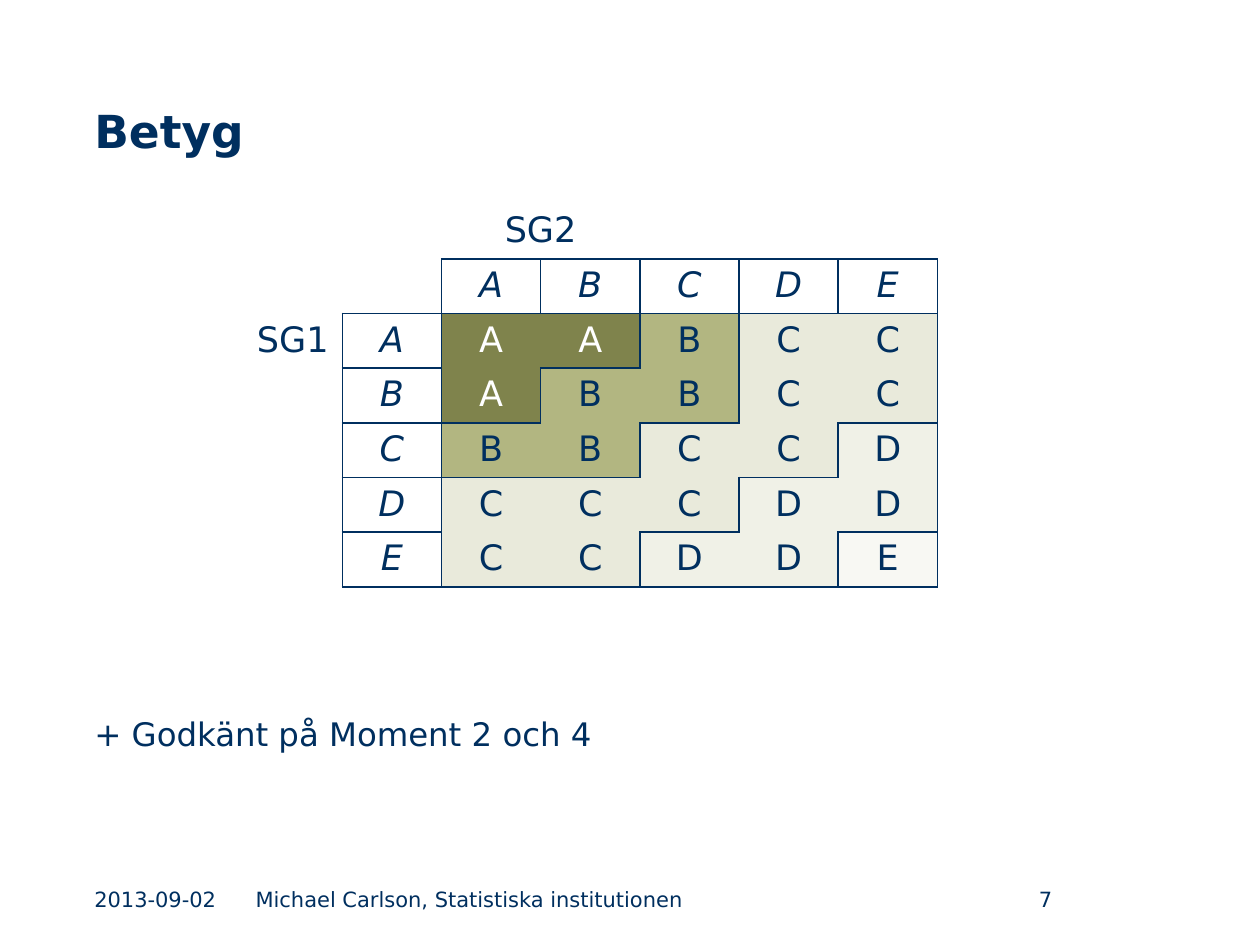
from pptx import Presentation
from pptx.dml.color import RGBColor
from pptx.enum.text import MSO_ANCHOR as Anchor, PP_ALIGN as Align
from pptx.oxml import parse_xml
from pptx.oxml.ns import nsdecls
from pptx.util import Inches, Pt

NAVY = RGBColor(0x00, 0x2F, 0x5F)
WHITE = RGBColor(0xFF, 0xFF, 0xFF)
SHADES = {
    "A": RGBColor(0x7F, 0x83, 0x4C),
    "B": RGBColor(0xB2, 0xB6, 0x81),
    "C": RGBColor(0xE9, 0xEA, 0xDB),
    "D": RGBColor(0xF0, 0xF1, 0xE7),
    "E": RGBColor(0xF8, 0xF8, 0xF3),
}
SIDES = {"L": (0, -1), "R": (0, 1), "T": (-1, 0), "B": (1, 0)}
MARKS = "ABCDE"
GRADES = ["AABCC", "ABBCC", "BBCCD", "CCCDD", "CCDDE"]


def write(frame, text, size=20, color=NAVY, bold=False, italic=False, align=Align.LEFT):
    """Put one formatted paragraph in a text frame."""
    para = frame.paragraphs[0]
    para.text = text
    para.alignment = align
    font = para.font
    font.name, font.size = "DejaVu Sans", Pt(size)
    font.bold, font.italic = bold, italic
    font.color.rgb = color


def zone(row, col):
    """Name the outlined area that a table cell belongs to."""
    if not (1 <= row <= 6 and 1 <= col <= 6) or row == col == 1:
        return None
    if row == 1 or col == 1:
        return row, col
    return GRADES[row - 2][col - 2]


class Deck:
    """Hold the presentation and its current slide."""

    def __init__(self):
        self.prs = Presentation()
        self.prs.slide_width, self.prs.slide_height = Inches(10), Inches(7.5)
        self.slide = self.prs.slides.add_slide(self.prs.slide_layouts[6])

    def text(self, text, left, top, width, height, anchor=Anchor.MIDDLE, foot=0.05, **style):
        """Add a text box."""
        box = self.slide.shapes.add_textbox(*map(Inches, (left, top, width, height)))
        frame = box.text_frame
        frame.word_wrap = True
        frame.vertical_anchor = anchor
        frame.margin_bottom = Inches(foot)
        write(frame, text, **style)

    def edge(self, cell, row, col):
        """Outline a cell wherever its neighbour lies in another zone."""
        props = cell._tc.get_or_add_tcPr()
        for spot, (side, (down, right)) in enumerate(SIDES.items()):
            seen = zone(row, col) != zone(row + down, col + right)
            paint = f'<a:solidFill><a:srgbClr val="{NAVY}"/></a:solidFill>' if seen else "<a:noFill/>"
            line = f'<a:ln{side} {nsdecls("a")} w="12700">{paint}</a:ln{side}>'
            props.insert(spot, parse_xml(line))

    def table(self, left, top, width, height):
        """Add the grade table."""
        count = 7
        lengths = map(Inches, (left, top, width, height))
        table = self.slide.shapes.add_table(count, count, *lengths).table
        table.first_row = table.horz_banding = False
        labels = {(0, 2): "SG2", (2, 0): "SG1"}
        for step, mark in enumerate(MARKS, 2):
            labels[1, step] = labels[step, 1] = mark
        for row in range(count):
            for col in range(count):
                cell, area = table.cell(row, col), zone(row, col)
                grade = area if area in SHADES else None
                if grade:
                    cell.fill.solid()
                    cell.fill.fore_color.rgb = SHADES[grade]
                else:
                    cell.fill.background()
                write(
                    cell.text_frame,
                    grade or labels.get((row, col), ""),
                    color=WHITE if grade == "A" else NAVY,
                    italic=isinstance(area, tuple),
                    align=Align.CENTER,
                )
                self.edge(cell, row, col)
        table.cell(0, 2).merge(table.cell(0, 3))


def main():
    """Build and save the slide."""
    deck = Deck()
    deck.text("Betyg", 0.65, 0.43, 8.69, 0.87, anchor=Anchor.BOTTOM, size=26, bold=True)
    deck.text("+ Godkänt på Moment 2 och 4", 0.65, 1.43, 8.69, 4.72,
              anchor=Anchor.BOTTOM, foot=0.17, size=18.5)
    deck.table(1.93, 1.62, 5.51, 2.96)
    for text, left, width, align in (
        ("2013-09-02", 0.65, 1.23, Align.LEFT),
        ("Michael Carlson, Statistiska institutionen", 1.93, 4.91, Align.LEFT),
        ("7", 6.89, 1.56, Align.RIGHT),
    ):
        deck.text(text, left, 6.98, width, 0.31, size=12, align=align)
    deck.prs.save("out.pptx")


if __name__ == "__main__":
    main()
